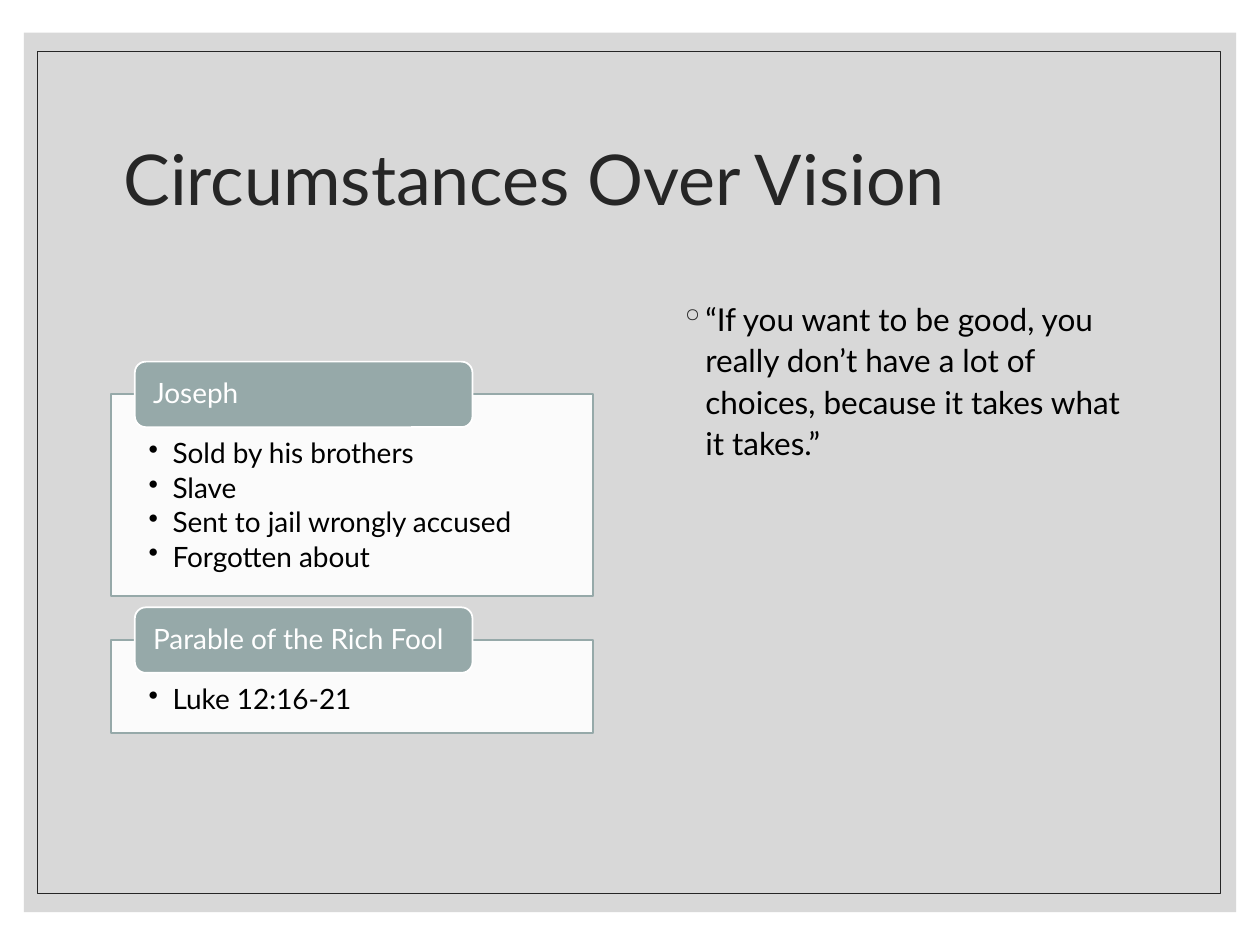
import pptx
import pptx.dml.color
import pptx.enum.shapes
import pptx.enum.text
import pptx.oxml
import pptx.oxml.ns
import pptx.util
from pptx.util import Inches

GREY = pptx.dml.color.RGBColor(0xBF, 0xBF, 0xBF)
DARK = pptx.dml.color.RGBColor(0x26, 0x26, 0x26)
SAGE = pptx.dml.color.RGBColor(0x96, 0xA9, 0xA9)
WHITE = pptx.dml.color.RGBColor(0xFF, 0xFF, 0xFF)
BLACK = pptx.dml.color.RGBColor(0, 0, 0)
KIND = pptx.enum.shapes.MSO_SHAPE
ANCHOR = pptx.enum.text.MSO_ANCHOR


def add_panel(kind, left, top, width, height, fill=None, line=None, weight=1, opacity=100):
    panel = page.shapes.add_shape(kind, Inches(left), Inches(top), Inches(width), Inches(height))
    panel.shadow.inherit = False
    if fill is None:
        panel.fill.background()
    else:
        panel.fill.solid()
        panel.fill.fore_color.rgb = fill
        color = panel.fill._xPr.find(".//" + pptx.oxml.ns.qn("a:srgbClr"))
        if opacity < 100:
            alpha = pptx.oxml.parse_xml(f'<a:alpha {pptx.oxml.ns.nsdecls("a")} val="{opacity * 1000}"/>')
            color.append(alpha)
    if line is None:
        panel.line.fill.background()
    else:
        panel.line.color.rgb = line
        panel.line.width = pptx.util.Pt(weight)
    return panel


def write(box, lines, size, color, anchor, insets, spacing=0.9, after=0, bullet=None, indent=0):
    frame = box.text_frame
    frame.word_wrap = True
    frame.vertical_anchor = anchor
    frame.margin_left, frame.margin_top, frame.margin_right, frame.margin_bottom = map(Inches, insets)
    frame.text = "\n".join(lines)
    for para in frame.paragraphs:
        para.alignment = pptx.enum.text.PP_ALIGN.LEFT
        para.line_spacing = spacing
        para.space_before = pptx.util.Pt(0)
        para.space_after = pptx.util.Pt(after)
        if bullet:
            props = para._p.get_or_add_pPr()
            props.set("marL", str(Inches(indent)))
            props.set("indent", str(-Inches(indent)))
            shade = DARK if bullet == "◦" else color
            for mark in (f'<a:buClr {{}}><a:srgbClr val="{shade}"/></a:buClr>',
                         f'<a:buChar {{}} char="{bullet}"/>'):
                props.append(pptx.oxml.parse_xml(mark.format(pptx.oxml.ns.nsdecls("a"))))
        for span in para.runs:
            span.font.name = "Lato"
            span.font.size = pptx.util.Pt(size)
            span.font.color.rgb = color


deck = pptx.Presentation()
deck.slide_width, deck.slide_height = Inches(10), Inches(7.5)
page = deck.slides.add_slide(deck.slide_layouts[5])

# Backdrop and thin frame
add_panel(KIND.RECTANGLE, 0.19, 0.26, 9.62, 6.98, fill=GREY, opacity=60)
add_panel(KIND.RECTANGLE, 0.3, 0.41, 9.39, 6.68, line=DARK, weight=0.5)

# Title, raised above the backdrop
title = page.shapes.title
title.element.getparent().append(title.element)
title.left, title.top, title.width, title.height = map(Inches, (0.88, 0.7, 8.25, 1.5))
write(title, ["Circumstances Over Vision"], 40, DARK, ANCHOR.MIDDLE, (0.1, 0.05, 0.1, 0.05))

# Example cards, each with a tab overlapping its top edge
cards = [
    ("Joseph", 3.13, 1.6,
     ["Sold by his brothers", "Slave", "Sent to jail wrongly accused", "Forgotten about"]),
    ("Parable of the Rich Fool", 5.08, 0.74, ["Luke 12:16-21"]),
]
for heading, top, height, points in cards:
    card = add_panel(KIND.RECTANGLE, 0.88, top, 3.83, height, fill=WHITE, line=SAGE, opacity=90)
    write(card, points, 16, BLACK, ANCHOR.TOP, (0.3, 0.36, 0.3, 0.12),
          after=2.4, bullet="•", indent=0.19)
    tab = add_panel(KIND.ROUNDED_RECTANGLE, 1.07, top - 0.26, 2.68, 0.52, fill=SAGE, line=WHITE)
    write(tab, [heading], 16, WHITE, ANCHOR.MIDDLE, (0.12, 0, 0.12, 0))

# Quotation
quote = page.shapes.add_textbox(Inches(5.3), Inches(2.3), Inches(3.83), Inches(4.1))
write(quote, ["“If you want to be good, you really don’t have a lot of choices, "
              "because it takes what it takes.”"],
      18, BLACK, ANCHOR.TOP, (0.1, 0.05, 0.1, 0.05), spacing=1.1, bullet="◦", indent=0.2)

deck.save("out.pptx")
